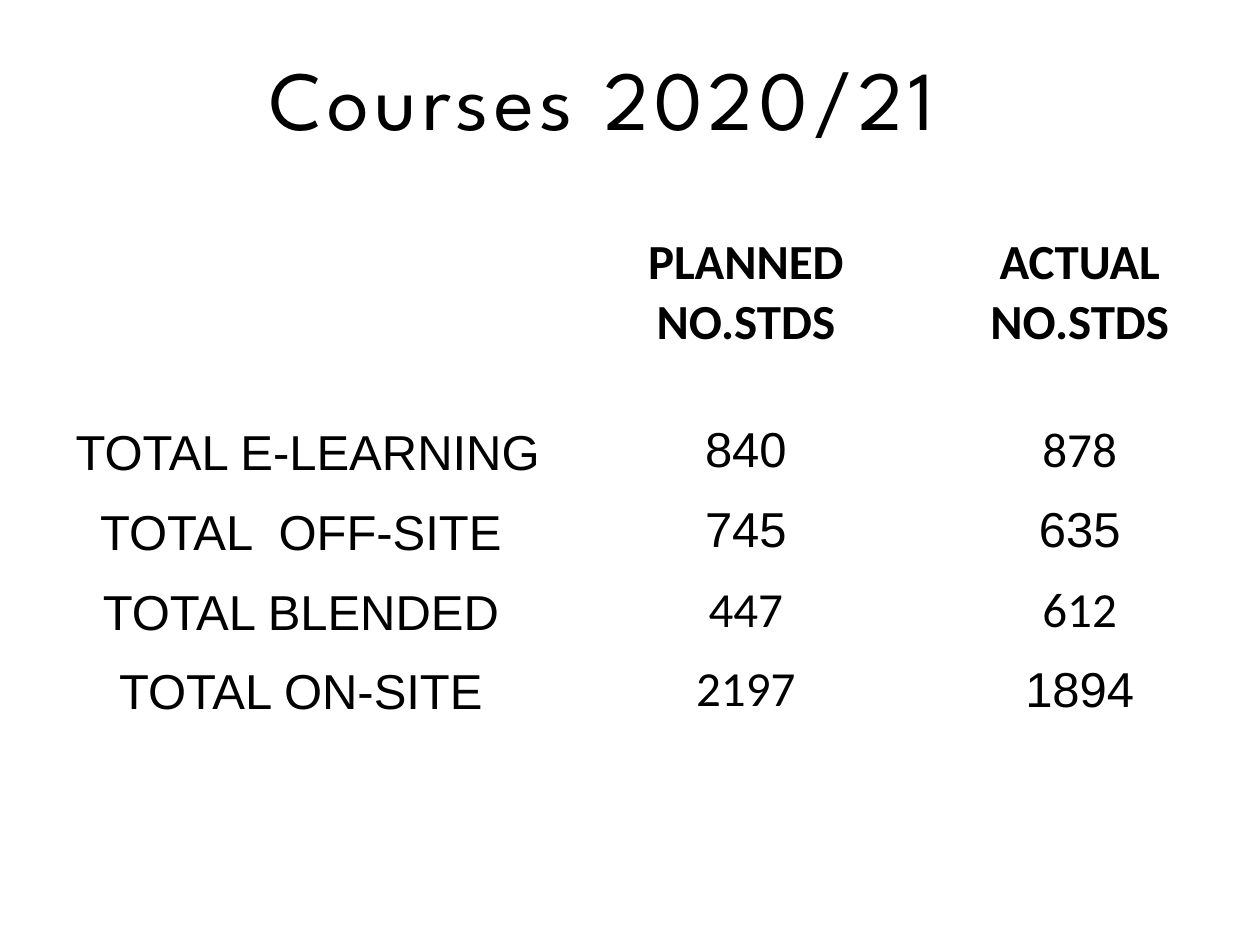
"""Build the slide of planned and actual student numbers for Courses 2020/21."""
from pptx import Presentation
from pptx import util as u
from pptx.dml.color import RGBColor
from pptx.enum import text


def color(value):
    return RGBColor.from_string(value)


def style(para, name, size, bold=False):
    para.alignment = text.PP_ALIGN.CENTER
    para.font.name = name
    para.font.size = u.Pt(size)
    para.font.bold = bold
    para.font.color.rgb = color("000000")


deck = Presentation()
deck.slide_width, deck.slide_height = u.Cm(25.4), u.Cm(19.05)
page = deck.slides.add_slide(deck.slide_layouts[6])

title = page.shapes.add_textbox(u.Cm(1.24), u.Cm(0.36), u.Cm(22.86), u.Cm(3.18))
frame = title.text_frame
frame.word_wrap = True
frame.vertical_anchor = text.MSO_ANCHOR.MIDDLE
frame.margin_right = u.Cm(1.3)
para = frame.paragraphs[0]
span = para.add_run()
span.text = "Courses 2020/21"
span.font._element.set("spc", "300")
para.space_after = u.Pt(6)
style(para, "League Spartan", 48)

rows = [
    [("", "Calibri"), ("PLANNED NO.STDS", "Calibri"), ("ACTUAL NO.STDS", "Calibri")],
    [("TOTAL E-LEARNING", "Arial"), ("840", "Arial"), ("878", "Calibri")],
    [("TOTAL  OFF-SITE", "Arial"), ("745", "Arial"), ("635", "Arial")],
    [("TOTAL BLENDED", "Arial"), ("447", "Calibri"), ("612", "Calibri")],
    [("TOTAL ON-SITE", "Arial"), ("2197", "Calibri"), ("1894", "Arial")],
]
widths = [9.86, 0.1, 7.49, 5.97]
heights = [4.75] + [1.61] * 4
table = page.shapes.add_table(
    len(heights), len(widths), u.Cm(1.27), u.Cm(3.53), u.Cm(sum(widths)), u.Cm(sum(heights))
).table
table.first_row = table.horz_banding = False
for column, width in zip(table.columns, widths):
    column.width = u.Cm(width)
for row, height in zip(table.rows, heights):
    row.height = u.Cm(height)
for cell in table.iter_cells():
    cell.fill.background()
    cell.margin_left = cell.margin_right = u.Cm(0.03)
    cell.margin_top = cell.margin_bottom = u.Cm(0.2)
table.cell(0, 0).merge(table.cell(0, 1))

for row_no, entries in enumerate(rows):
    for column_no, (words, font_name) in zip((0, 2, 3), entries):
        cell = table.cell(row_no, column_no)
        is_label = column_no == 0
        cell.vertical_anchor = text.MSO_ANCHOR.BOTTOM if is_label else text.MSO_ANCHOR.MIDDLE
        if is_label and row_no > 1:
            cell.margin_right = u.Cm(0.3)
        cell.text = words
        style(cell.text_frame.paragraphs[0], font_name, 28, bold=row_no == 0)

deck.save("out.pptx")
